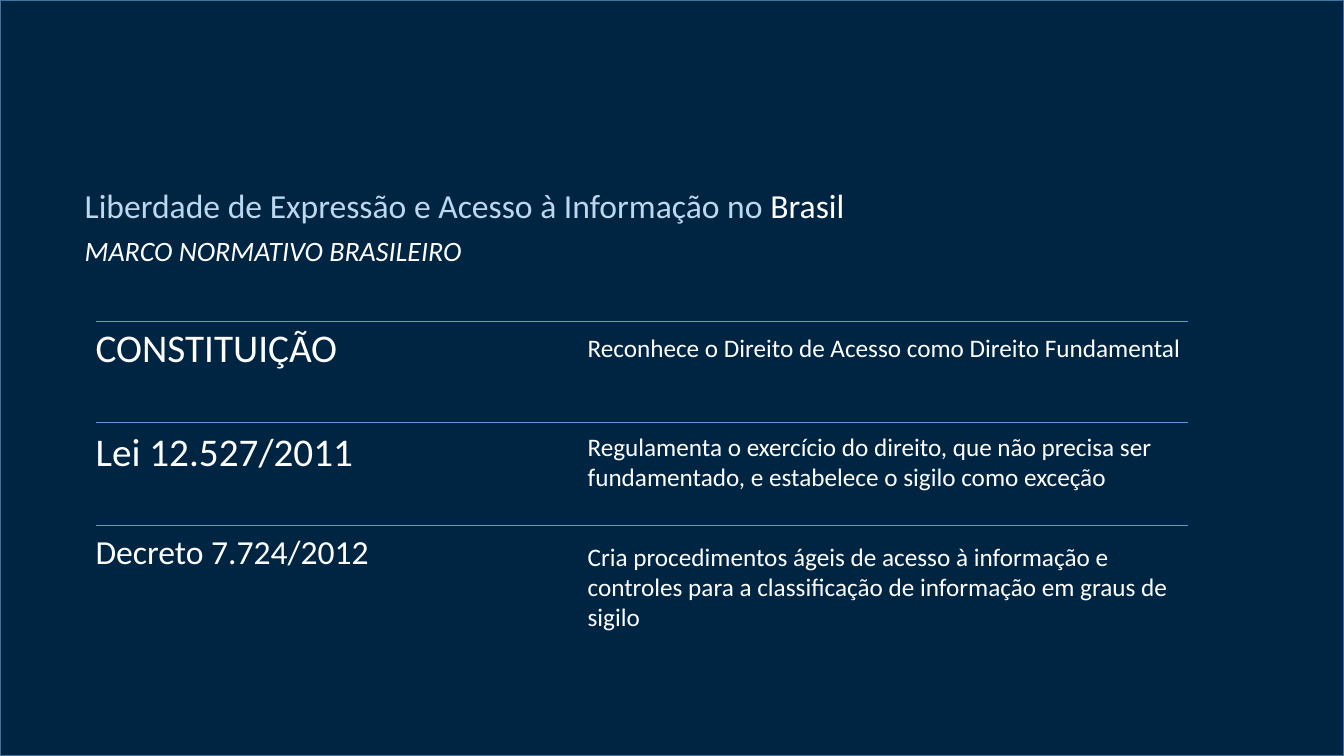
import pptx
import pptx.dml.color
import pptx.enum.shapes
import pptx.enum.text
import pptx.oxml
import pptx.util
from pptx.util import Inches

NAVY, SKY, WHITE = "002543", "BDD7EE", "FFFFFF"
EDGE, RULE = "43739E", "5B9BD5"


def colour(hex_code):
    return pptx.dml.color.RGBColor.from_string(hex_code)


class NormsSlide:
    """Holds the slide being built and its text style."""

    font = "Calibri"

    def __init__(self, deck):
        self.slide = deck.slides.add_slide(deck.slide_layouts[5])
        self.shapes = self.slide.shapes

    def backdrop(self, width, height):
        panel = self.shapes.add_shape(
            pptx.enum.shapes.MSO_SHAPE.RECTANGLE, 0, 0, width, height)
        panel.shadow.inherit = False
        panel.fill.solid()
        panel.fill.fore_color.rgb = colour(NAVY)
        panel.line.color.rgb = colour(EDGE)
        panel.line.width = pptx.util.Pt(1)
        # The title placeholder already exists, so the backdrop goes behind it.
        tree = panel.element.getparent()
        tree.remove(panel.element)
        tree.insert(2, panel.element)

    def fill_text(self, frame, runs, size, italic=None, wrap=False):
        """Fill a text frame with (text, colour) runs."""
        frame.word_wrap = wrap
        frame.auto_size = pptx.enum.text.MSO_AUTO_SIZE.SHAPE_TO_FIT_TEXT
        frame.vertical_anchor = pptx.enum.text.MSO_ANCHOR.TOP
        paragraph = frame.paragraphs[0]
        paragraph.alignment = pptx.enum.text.PP_ALIGN.LEFT
        for text, shade in runs:
            run = paragraph.add_run()
            run.text = text
            run.font.name = self.font
            run.font.size = pptx.util.Pt(size)
            run.font.italic = italic
            run.font.color.rgb = colour(shade)

    def title(self, box, runs, size):
        heading = self.shapes.title
        heading.left, heading.top, heading.width, heading.height = map(Inches, box)
        self.fill_text(heading.text_frame, runs, size)

    def text(self, box, words, size, **style):
        frame = self.shapes.add_textbox(*map(Inches, box)).text_frame
        self.fill_text(frame, [(words, WHITE)], size, **style)

    def rule(self, left, right, y):
        line = self.shapes.add_connector(
            pptx.enum.shapes.MSO_CONNECTOR.STRAIGHT,
            Inches(left), Inches(y), Inches(right), Inches(y))
        line.line.color.rgb = colour(RULE)
        line.line.width = pptx.util.Pt(0.5)
        properties = line.element.spPr
        properties.append(pptx.oxml.parse_xml(
            '<a:effectLst xmlns:a="http://schemas.openxmlformats.org/drawingml/2006/main"/>'))


def main():
    deck = pptx.Presentation()
    deck.slide_width, deck.slide_height = Inches(13.33), Inches(7.5)
    page = NormsSlide(deck)
    page.backdrop(deck.slide_width, deck.slide_height)
    page.title((0.74, 1.78, 7.81, 0.5),
               [("Liberdade de Expressão e Acesso à Informação no ", SKY),
                ("Brasil", WHITE)], 24)
    page.text((0.74, 2.27, 3.98, 0.44), "MARCO NORMATIVO BRASILEIRO", 20, italic=True)

    # Rule height; norm: top, width, height, size; summary: top, width, height, wrap
    norms = [
        (3.19, "CONSTITUIÇÃO", (3.16, 2.71, 0.57, 28),
         "Reconhece o Direito de Acesso como Direito Fundamental",
         (3.25, 6.15, 0.4, False)),
        (4.19, "Lei 12.527/2011", (4.19, 2.79, 0.57, 28),
         "Regulamenta o exercício do direito, que não precisa ser "
         "fundamentado, e estabelece o sigilo como exceção",
         (4.23, 6.13, 0.71, True)),
        (5.21, "Decreto 7.724/2012", (5.22, 2.93, 0.5, 24),
         "Cria procedimentos ágeis de acesso à informação e controles "
         "para a classificação de informação em graus de sigilo",
         (5.32, 6.13, 1.01, True)),
    ]
    for rule_y, norm, (*norm_box, size), summary, (*summary_box, wrap) in norms:
        page.rule(0.95, 11.78, rule_y)
        page.text((0.85, *norm_box), norm, size)
        page.text((5.73, *summary_box), summary, 18, wrap=wrap)

    deck.save("out.pptx")


if __name__ == "__main__":
    main()
